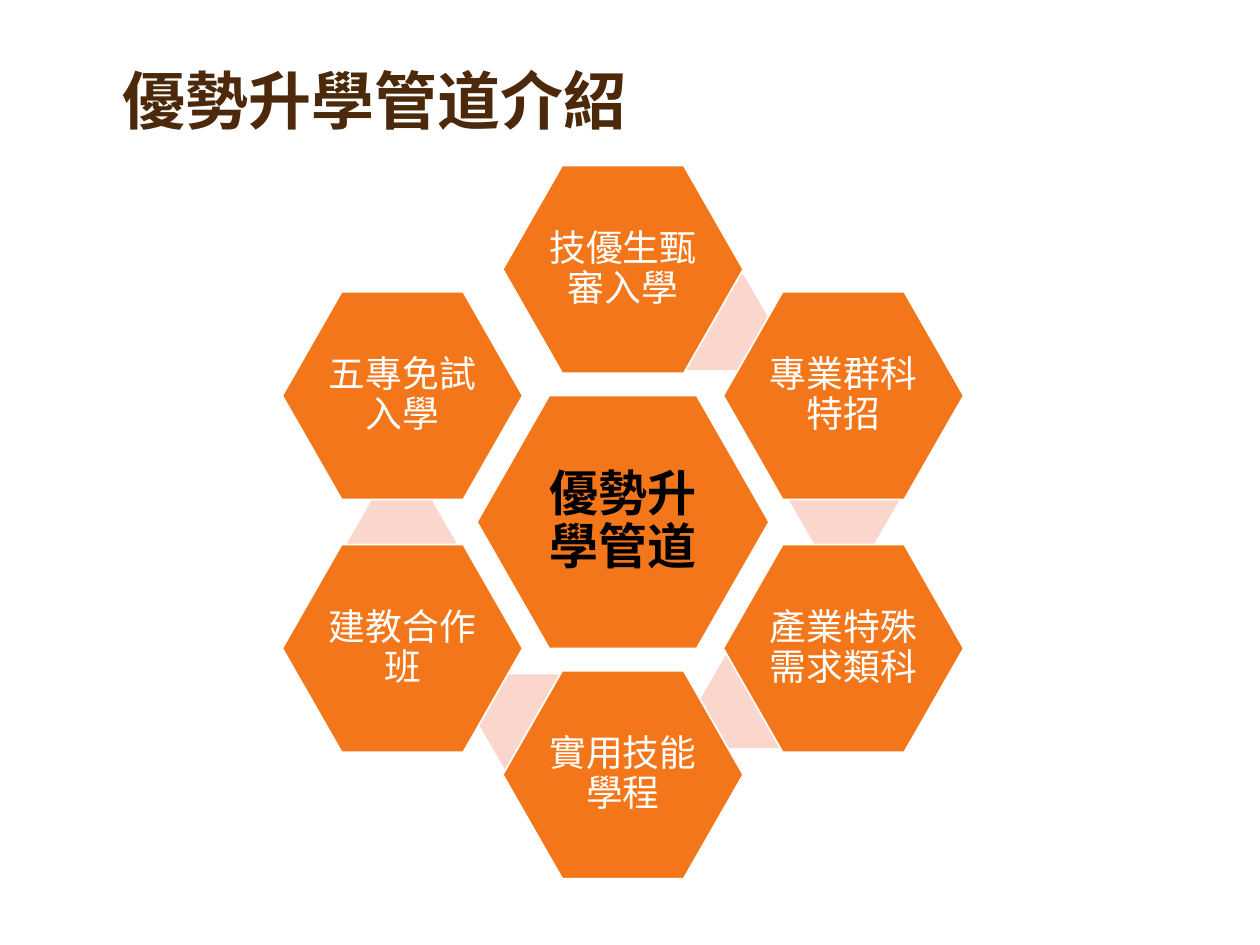
from lxml import etree
from pptx import Presentation
from pptx.dml.color import RGBColor
from pptx.enum.shapes import MSO_SHAPE
from pptx.enum.text import MSO_ANCHOR, PP_ALIGN
from pptx.oxml.ns import qn
from pptx.util import Pt

HEX = MSO_SHAPE.HEXAGON
MIDDLE, BOTTOM = MSO_ANCHOR.MIDDLE, MSO_ANCHOR.BOTTOM
LEFT, CENTER = PP_ALIGN.LEFT, PP_ALIGN.CENTER

FONT = "Noto Sans CJK TC"
ORANGE, PINK, WHITE, BLACK, BROWN = "F3771A", "FAD6CD", "FFFFFF", "000000", "4D290B"

TITLE = "優勢升學管道介紹"
CORE = "優勢升學管道"
RING = [
    ("技優生甄審入學", (0, -2), (53, -114)),
    ("專業群科特招", (1, -1), (126.4, -12.6)),
    ("產業特殊需求類科", (1, 1), (75.4, 102)),
    ("實用技能學程", (0, 2), (-51.5, 114.3)),
    ("建教合作班", (-1, 1), (-126.4, 12.6)),
    ("五專免試入學", (-1, -1), None),
]
MID_X, MID_Y = 356, 298.3
STEP_X, STEP_Y = 126, 72.2
CORE_SIZE, RING_SIZE, LINK_SIZE = (167, 144.5), (137.4, 118.8), (63.2, 54.5)


def rgb(code):
    return RGBColor.from_string(code)


def write(shape, text, size, color, bold, align, anchor):
    frame = shape.text_frame
    frame.word_wrap = True
    frame.vertical_anchor = anchor
    para = frame.paragraphs[0]
    para.text = text
    para.alignment = align
    para.line_spacing = 0.9
    font = para.font
    font.name, font.size, font.bold = FONT, Pt(size), bold
    font.color.rgb = rgb(color)
    props = para._p.pPr.find(qn("a:defRPr"))
    etree.SubElement(props, qn("a:ea"), typeface=FONT)


def add_hex(slide, shift, size, fill, adj):
    wide, high = size
    shape = slide.shapes.add_shape(
        HEX, Pt(MID_X + shift[0] - wide / 2), Pt(MID_Y + shift[1] - high / 2),
        Pt(wide), Pt(high))
    shape.adjustments[0] = adj
    shape.shadow.inherit = False
    shape.fill.solid()
    shape.fill.fore_color.rgb = rgb(fill)
    shape.line.fill.background()
    return shape


def add_cell(slide, shift, size, text, points, color, bold, inset):
    cell = add_hex(slide, shift, size, ORANGE, 0.286)
    cell.line.color.rgb = rgb(WHITE)
    cell.line.width = Pt(1)
    frame = cell.text_frame
    frame.margin_left = frame.margin_right = Pt(inset)
    frame.margin_top = frame.margin_bottom = Pt(inset)
    write(cell, text, points, color, bold, CENTER, MIDDLE)


def main():
    deck = Presentation()
    deck.slide_width, deck.slide_height = Pt(720), Pt(540)
    slide = deck.slides.add_slide(deck.slide_layouts[5])

    title = slide.shapes.title
    title.left, title.top = Pt(62.6), Pt(23.8)
    title.width, title.height = Pt(594), Pt(59)
    write(title, TITLE, 36, BROWN, True, LEFT, BOTTOM)

    add_cell(slide, (0, 0), CORE_SIZE, CORE, 28, BLACK, True, 2.8)
    for text, (col, row), link in RING:
        if link:
            add_hex(slide, link, LINK_SIZE, PINK, 0.289)
        add_cell(slide, (col * STEP_X, row * STEP_Y), RING_SIZE,
                 text, 21, WHITE, False, 2.1)

    deck.save("out.pptx")


if __name__ == "__main__":
    main()
